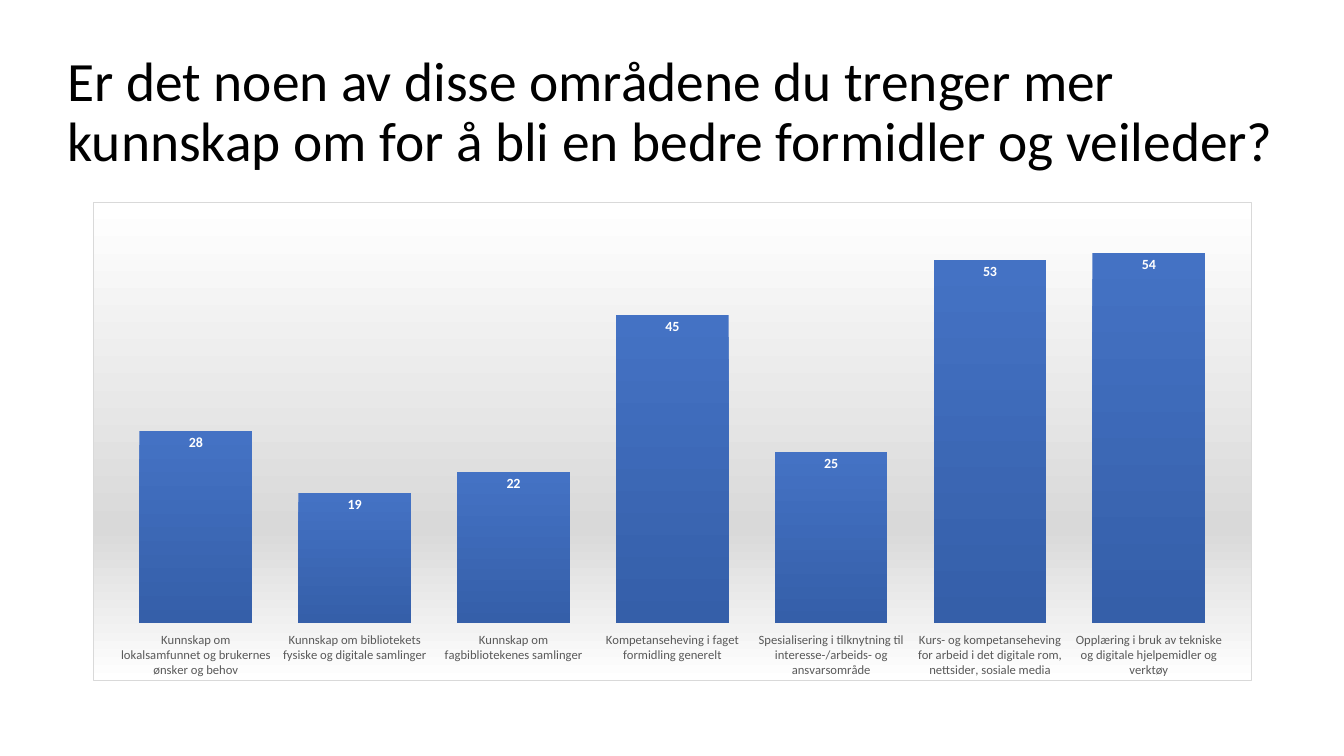
from pptx import Presentation
from pptx.chart.data import CategoryChartData
from pptx.dml.color import RGBColor
from pptx.enum.chart import XL_CHART_TYPE, XL_LABEL_POSITION, XL_TICK_LABEL_POSITION, XL_TICK_MARK
from pptx.enum.text import MSO_ANCHOR, MSO_AUTO_SIZE, PP_ALIGN
from pptx.oxml import parse_xml
from pptx.oxml.ns import nsdecls
from pptx.util import Pt

FONT = "Calibri"
QUESTION = ("Er det noen av disse områdene du trenger mer kunnskap om "
            "for å bli en bedre formidler og veileder?")
ANSWERS = {
    "Kunnskap om lokalsamfunnet og brukernes ønsker og behov": 28,
    "Kunnskap om bibliotekets fysiske og digitale samlinger": 19,
    "Kunnskap om fagbibliotekenes samlinger": 22,
    "Kompetanseheving i faget formidling generelt": 45,
    "Spesialisering i tilknytning til interesse-/arbeids- og ansvarsområde": 25,
    "Kurs- og kompetanseheving for arbeid i det digitale rom, nettsider, sosiale media": 53,
    "Opplæring i bruk av tekniske og digitale hjelpemidler og verktøy": 54,
}


def color(value):
    return RGBColor.from_string(value)


def style_font(font, size, value, bold=False):
    font.name = FONT
    font.size = Pt(size)
    font.bold = bold
    font.color.rgb = color(value)


def vertical_gradient(stops):
    marks = "".join(
        f'<a:gs pos="{percent * 1000}"><a:srgbClr val="{color(value)}"/></a:gs>'
        for percent, value in stops)
    return parse_xml(
        f'<a:gradFill {nsdecls("a")} rotWithShape="1"><a:gsLst>{marks}</a:gsLst>'
        '<a:lin ang="5400000" scaled="0"/></a:gradFill>')


def write_title(title):
    title.left, title.top = Pt(41), Pt(28.8)
    title.width, title.height = Pt(876.25), Pt(104.4)
    frame = title.text_frame
    frame.text = QUESTION
    frame.word_wrap = True
    frame.auto_size = MSO_AUTO_SIZE.NONE
    frame.vertical_anchor = MSO_ANCHOR.MIDDLE
    paragraph = frame.paragraphs[0]
    paragraph.alignment = PP_ALIGN.LEFT
    paragraph.line_spacing = 0.9
    style_font(paragraph.font, 39.6, "000000")


def paint_background(chart):
    background = parse_xml(
        f'<c:spPr {nsdecls("c", "a")}><a:ln w="{Pt(0.75)}"><a:solidFill>'
        f'<a:srgbClr val="{color("D9D9D9")}"/></a:solidFill></a:ln></c:spPr>')
    background.insert(0, vertical_gradient([(0, "FFFFFF"), (68, "D9D9D9"), (100, "FFFFFF")]))
    chart._chartSpace.get_or_add_txPr().addprevious(background)


def place_plot(chart, **fractions):
    area = chart._chartSpace.chart.plotArea
    for layout in area.xpath("c:layout"):
        area.remove(layout)
    sizes = "".join(f'<c:{key} val="{value}"/>' for key, value in fractions.items())
    area.insert(0, parse_xml(
        f'<c:layout {nsdecls("c")}><c:manualLayout><c:layoutTarget val="inner"/>'
        f'<c:xMode val="edge"/><c:yMode val="edge"/>{sizes}</c:manualLayout></c:layout>'))


def style_axes(chart):
    topics = chart.category_axis
    topics.major_tick_mark = topics.minor_tick_mark = XL_TICK_MARK.NONE
    topics.tick_label_position = XL_TICK_LABEL_POSITION.LOW
    topics.format.line.fill.background()
    style_font(topics.tick_labels.font, 9, "595959")
    counts = chart.value_axis
    counts.minimum_scale, counts.maximum_scale = 0, 60
    counts.has_major_gridlines = False
    counts.visible = False


def style_columns(plot):
    plot.gap_width = 41
    plot.vary_by_categories = False
    series = plot.series[0]
    series.invert_if_negative = False
    series._element.get_or_add_spPr().append(
        vertical_gradient([(0, "4472C4"), (100, "355FA9")]))
    labels = series.data_labels
    labels.show_value = True
    labels.position = XL_LABEL_POSITION.INSIDE_END
    labels.number_format = "0"
    labels.number_format_is_linked = False
    style_font(labels.font, 10, "FFFFFF", bold=True)


def add_answer_chart(slide):
    data = CategoryChartData(number_format="0")
    data.categories = list(ANSWERS)
    data.add_series("Series 1", list(ANSWERS.values()))
    chart = slide.shapes.add_chart(
        XL_CHART_TYPE.COLUMN_CLUSTERED, Pt(66.25), Pt(144), Pt(828), Pt(342.75), data).chart
    chart.has_title = False
    chart.has_legend = False
    style_font(chart.font, 10, "000000")
    paint_background(chart)
    place_plot(chart, x=0.02, y=0.02, w=0.96, h=0.86)
    style_axes(chart)
    style_columns(chart.plots[0])


def main():
    presentation = Presentation()
    presentation.slide_width, presentation.slide_height = Pt(960), Pt(540)
    slide = presentation.slides.add_slide(presentation.slide_layouts[5])
    write_title(slide.shapes.title)
    add_answer_chart(slide)
    presentation.save("out.pptx")


if __name__ == "__main__":
    main()
